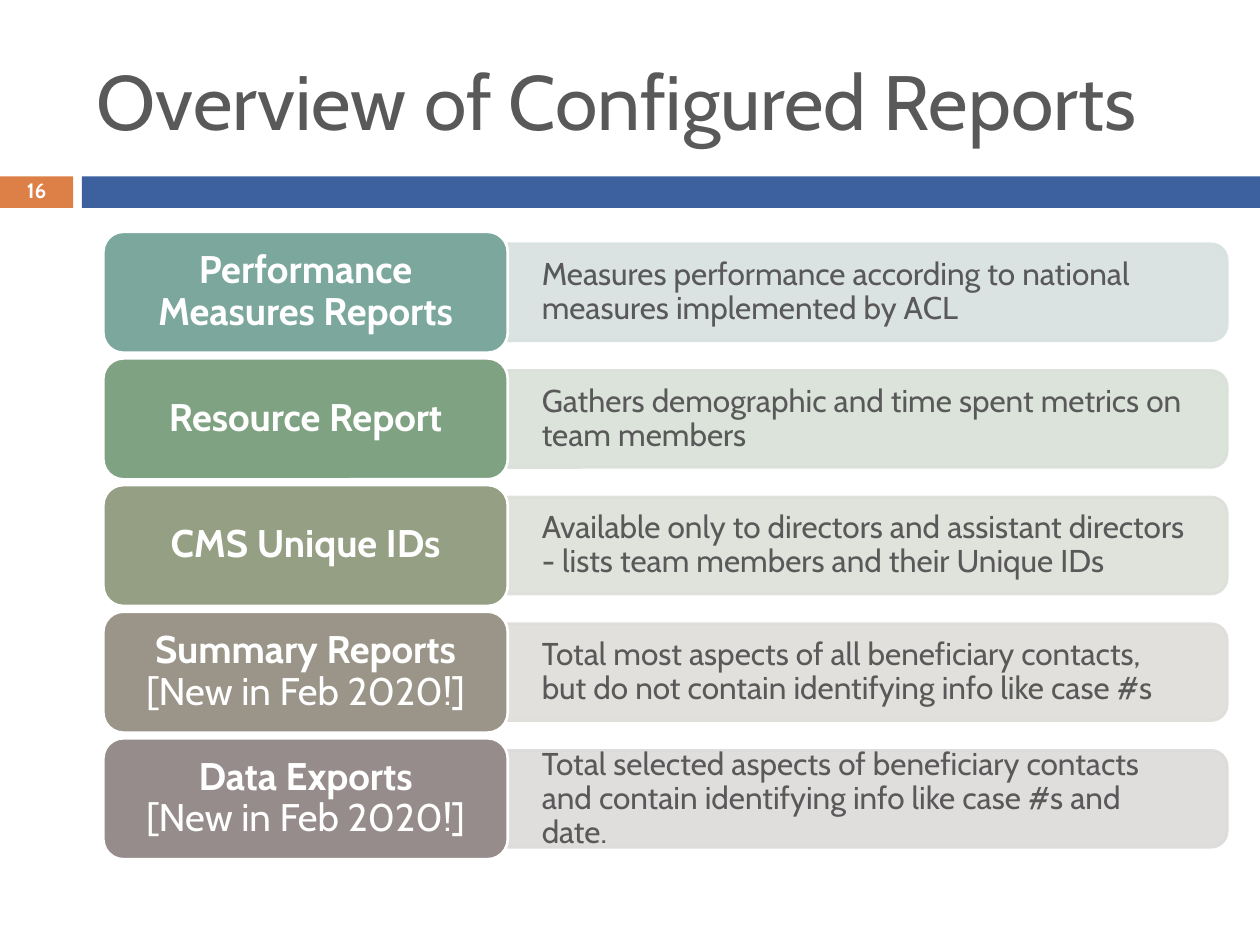
from lxml.etree import SubElement
from pptx import Presentation
from pptx.dml.color import RGBColor
from pptx.enum.shapes import MSO_SHAPE
from pptx.enum.text import MSO_ANCHOR, PP_ALIGN
from pptx.oxml.ns import qn
from pptx.util import Inches, Pt

FONT = "Cabin"
COLORS = {
    "text": "595959", "white": "FFFFFF", "orange": "DD8047", "blue": "3C619E",
    "teal": "7BA79D", "teal_tint": "D7E1DF",
    "green": "7FA382", "green_tint": "D8E0D8",
    "olive": "949F83", "olive_tint": "DDDFD9",
    "taupe": "9A9588", "taupe_tint": "DEDDDA",
    "mauve": "968C8C", "mauve_tint": "DDDADA",
}
SLIDE_WIDTH, SLIDE_HEIGHT = 10, 7.5
ROW_PITCH, LABEL_HEIGHT, LABEL_WIDTH = 1.005, 0.96, 3.21
PANEL_HEIGHT, PANEL_WIDTH = 0.77, 5.71
REPORTS = [
    ("teal", [("Performance Measures Reports", True)],
     "Measures performance according to national measures implemented by ACL"),
    ("green", [("Resource Report", True)],
     "Gathers demographic and time spent metrics on team members"),
    ("olive", [("CMS Unique IDs", True)],
     "Available only to directors and assistant directors - lists team members and their Unique IDs"),
    ("taupe", [("Summary Reports", True), (" [New in Feb 2020!]", False)],
     "Total most aspects of all beneficiary contacts, but do not contain identifying info like case #s"),
    ("mauve", [("Data Exports", True), ("\n", False), ("[New in Feb 2020!]", False)],
     "Total selected aspects of beneficiary contacts and contain identifying info like case #s and date."),
]


def rgb(name):
    return RGBColor.from_string(COLORS[name])


def add_block(slide, kind, box, fill, line=None, opacity=None):
    shape = slide.shapes.add_shape(kind, *map(Inches, box))
    shape.shadow.inherit = False
    shape.fill.solid()
    shape.fill.fore_color.rgb = rgb(fill)
    if line:
        shape.line.color.rgb = rgb(line)
        shape.line.width = Pt(1.5)
    else:
        shape.line.fill.background()
    if opacity:
        for color in shape.element.spPr.iter(qn("a:srgbClr")):
            SubElement(color, qn("a:alpha"), val=str(opacity * 1000))
    return shape


def add_text_box(slide, box):
    return slide.shapes.add_textbox(*map(Inches, box))


def write_text(shape, runs, size, color, align=PP_ALIGN.LEFT, spacing=1.0, insets=(0.1, 0.05)):
    frame = shape.text_frame
    frame.word_wrap = True
    frame.vertical_anchor = MSO_ANCHOR.MIDDLE
    frame.margin_left = frame.margin_right = Inches(insets[0])
    frame.margin_top = frame.margin_bottom = Inches(insets[1])
    paragraph = frame.paragraphs[0]
    paragraph.alignment = align
    paragraph.line_spacing = spacing
    for text, bold in runs:
        if text == "\n":
            paragraph.add_line_break()
            continue
        run = paragraph.add_run()
        run.text = text
        run.font.name = FONT
        run.font.size = Pt(size)
        run.font.bold = bold
        run.font.color.rgb = rgb(color)


def add_header(slide, box):
    left, top, width, height = box
    bar_top, bar_height, number_width, bar_left = top + 1.4, 0.25, 0.58, 0.65
    number_box = (left, bar_top, number_width, bar_height)
    number = add_block(slide, MSO_SHAPE.RECTANGLE, number_box, "orange")
    write_text(number, [("16", True)], 11.9, "white", PP_ALIGN.CENTER, 0.8, (0, 0))
    bar_box = (left + bar_left, bar_top, width - bar_left, bar_height)
    add_block(slide, MSO_SHAPE.RECTANGLE, bar_box, "blue")
    title = add_text_box(slide, (left + 0.67, top + 0.25, 8.92, 1.08))
    write_text(title, [("Overview of Configured Reports", False)], 44, "text")


def add_panel(slide, box, tint, description):
    left, top, width, height = box
    turned_box = (left + (width - height) / 2, top + (height - width) / 2, height, width)
    panel = add_block(slide, MSO_SHAPE.ROUND_2_SAME_RECTANGLE, turned_box, tint, tint, 90)
    panel.rotation = 90
    text_box = add_text_box(slide, (left, top + 0.04, width - 0.04, height - 0.08))
    write_text(text_box, [(description, False)], 18, "text", spacing=0.9, insets=(0.27, 0.14))


def add_report_row(slide, left, top, color, label_runs, description):
    panel_top = top + (LABEL_HEIGHT - PANEL_HEIGHT) / 2
    panel_box = (left + LABEL_WIDTH, panel_top, PANEL_WIDTH, PANEL_HEIGHT)
    add_panel(slide, panel_box, f"{color}_tint", description)
    label_box = (left, top, LABEL_WIDTH, LABEL_HEIGHT)
    label = add_block(slide, MSO_SHAPE.ROUNDED_RECTANGLE, label_box, color, "white")
    write_text(label, label_runs, 22, "white", PP_ALIGN.CENTER, 0.9, (0.09, 0.05))


def add_report_list(slide, left, top):
    for row, report in enumerate(REPORTS):
        add_report_row(slide, left, top + row * ROW_PITCH, *report)


def main():
    presentation = Presentation()
    presentation.slide_width = Inches(SLIDE_WIDTH)
    presentation.slide_height = Inches(SLIDE_HEIGHT)
    slide = presentation.slides.add_slide(presentation.slide_layouts[6])
    add_header(slide, (0, 0, SLIDE_WIDTH, 1.65))
    add_report_list(slide, 0.82, 1.84)
    presentation.save("out.pptx")


if __name__ == "__main__":
    main()
